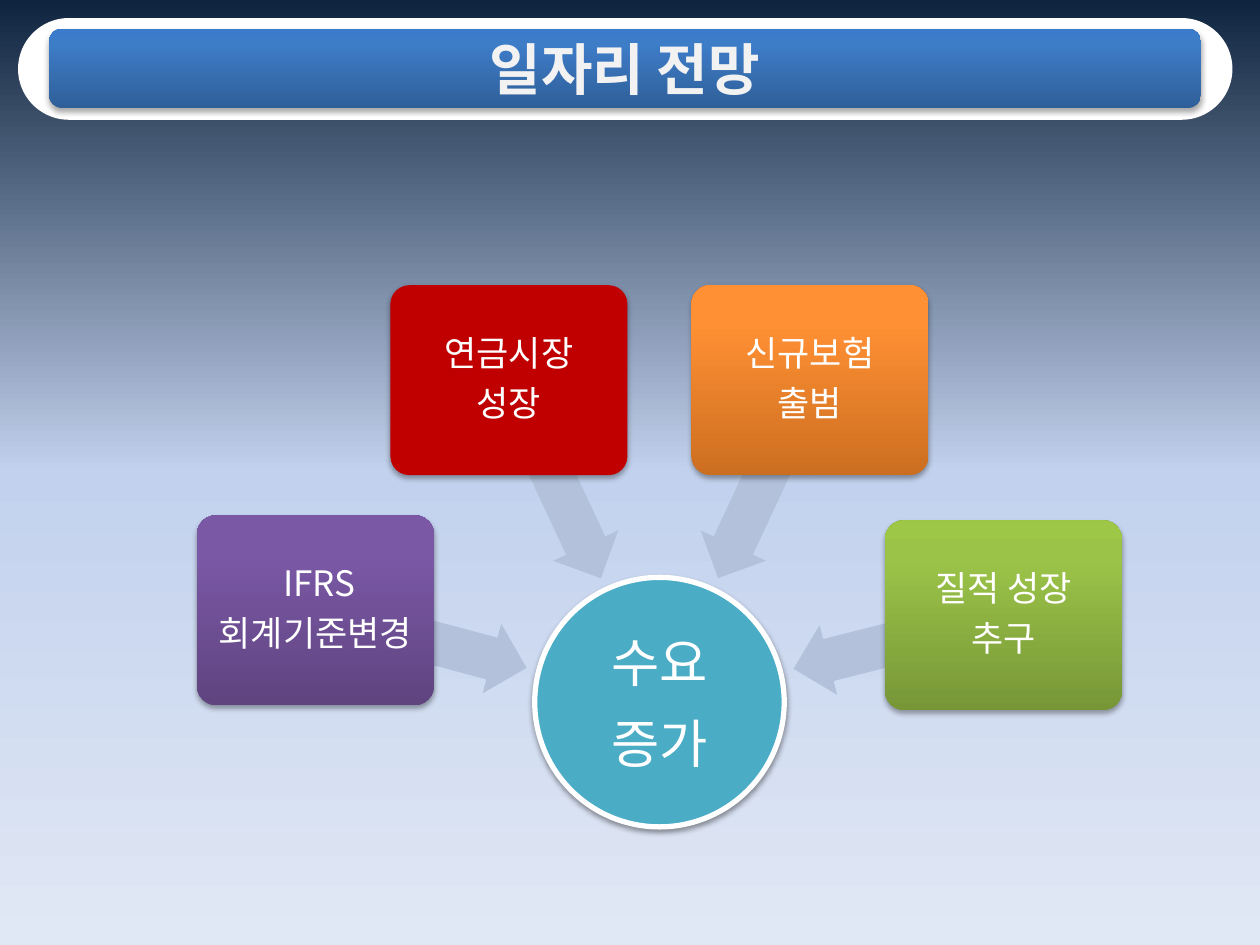
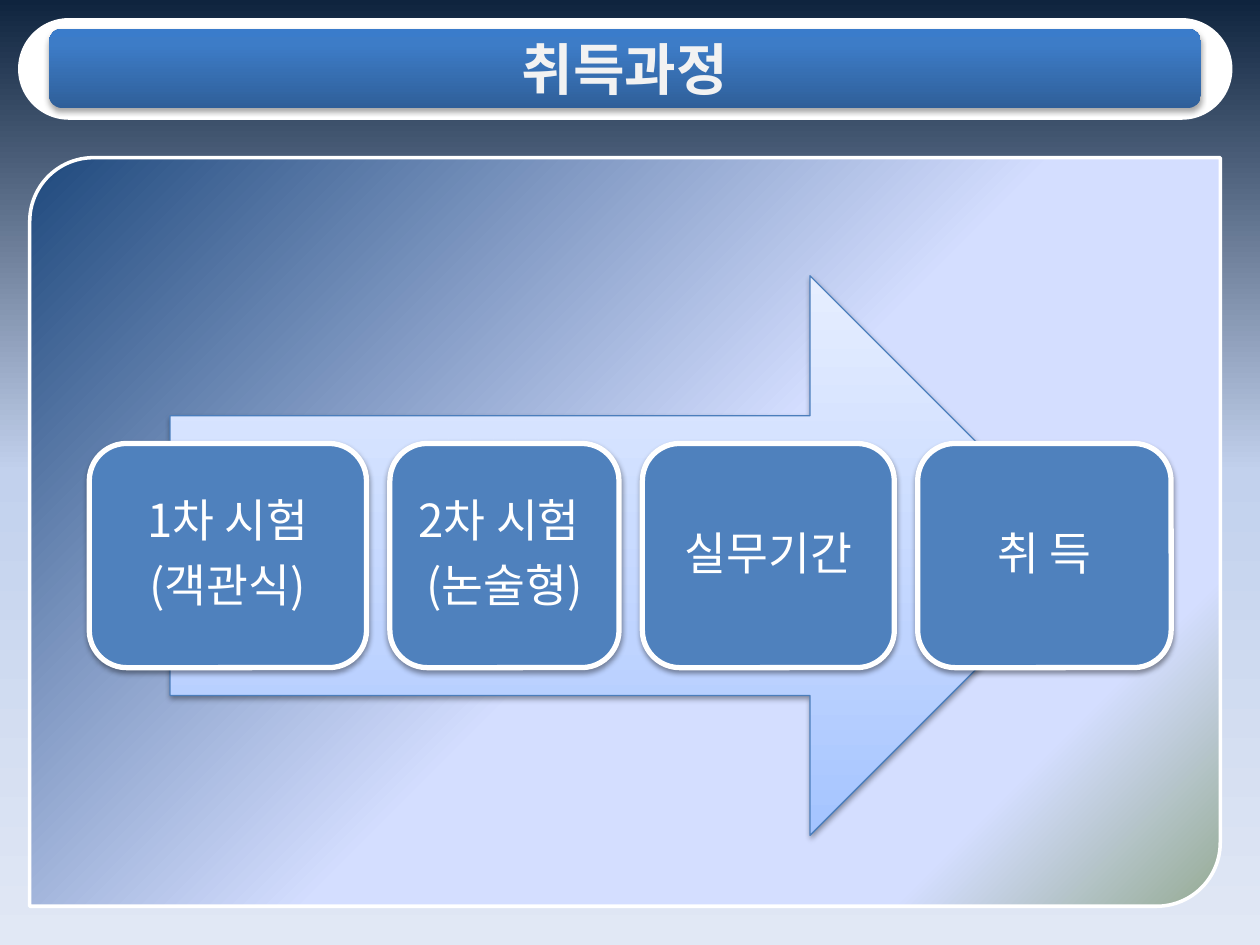
from dataclasses import dataclass
from typing import NamedTuple

from lxml import etree
from pptx import Presentation
from pptx.dml.color import RGBColor
from pptx.enum.shapes import MSO_SHAPE
from pptx.enum.text import MSO_ANCHOR, PP_ALIGN
from pptx.oxml.ns import qn
from pptx.util import Cm, Pt

ROUND, OVAL = MSO_SHAPE.ROUNDED_RECTANGLE, MSO_SHAPE.OVAL
LEFT_ARROW, RIGHT_ARROW = MSO_SHAPE.LEFT_ARROW, MSO_SHAPE.RIGHT_ARROW
DIAGONAL = MSO_SHAPE.ROUND_2_DIAG_RECTANGLE
MIDDLE, CENTER = MSO_ANCHOR.MIDDLE, PP_ALIGN.CENTER

FONT = "Noto Sans CJK KR"
WHITE, TITLE_COLOR = "FFFFFF", "F2F2F2"
STEP_BLUE, HUB_TEAL, LINK_GRAY = "4F81BD", "4BACC6", "B3C1DB"


class Gradient(NamedTuple):
    """Stops as (percent, colour); the angle runs clockwise."""
    angle: int
    stops: tuple[tuple[int, str], ...]


class Line(NamedTuple):
    color: str
    width: float


class Shadow(NamedTuple):
    """Black shadow straight below; lengths in points, alpha in percent."""
    alpha: int
    distance: float
    blur: float = 3.1


class Box(NamedTuple):
    """Left, top, width and height in centimetres."""
    left: float
    top: float
    width: float
    height: float


@dataclass(frozen=True)
class Look:
    fill: str | Gradient
    line: Line | None = None
    shadow: Shadow | None = None
    adj: tuple[float, ...] = ()


@dataclass(frozen=True)
class TextStyle:
    size: int
    color: str = WHITE
    bold: bool = False
    line_spacing: float | None = None
    after: int = 0
    inset: float = 0.05


@dataclass(frozen=True)
class Factor:
    lines: tuple[str, ...]
    left: float
    top: float
    fill: str | Gradient
    link_left: float
    link_top: float
    link_angle: float


class Step(NamedTuple):
    lines: tuple[str, ...]
    width: float


def rising(low: str, mid: str, high: str) -> Gradient:
    """Gradient from the bottom edge to the top edge."""
    return Gradient(270, ((0, low), (80, mid), (100, high)))


BACKGROUND = Gradient(90, ((0, "0F243E"), (50, "C2D1ED"), (100, "E1E8F5")))
SOFT, DEEP = Shadow(38, 1.6), Shadow(35, 1.8)

BAND = Look(WHITE, Line(WHITE, 2), adj=(0.5,))
BAND_BOX = Box(0.4, 0.4, 24.41, 1.98)
TITLE = Look(rising("2F5F99", "3D7CC7", "3A7CCB"), shadow=DEEP)
TITLE_BOX = Box(0.99, 0.58, 23.22, 1.6)
TITLE_TEXT = TextStyle(32, TITLE_COLOR, bold=True)

HUB = Look(HUB_TEAL, Line(WHITE, 3), SOFT)
HUB_BOX = Box(10.78, 11.64, 5.03, 5.03)
HUB_TEXT = TextStyle(30, after=35)
LINK = Look(LINK_GRAY, adj=(0.6, 0.5))
LINK_W, LINK_H = 4.39, 1.45
FACTOR_W, FACTOR_H = 4.78, 3.83
FACTOR_TEXT = TextStyle(20, line_spacing=0.9, after=35)
FACTORS = (
    Factor((" IFRS", "회계기준변경"), 3.97, 10.39,
           rising("5F4480", "7B58A6", "7C57A8"), 6.3, 12.17, 195),
    Factor(("연금시장", "성장"), 7.87, 5.75, "C00000", 8.99, 8.94, 245),
    Factor(("신규보험", "출범"), 13.94, 5.75,
           rising("CC6E20", "FF9034", "FF9136"), 13.21, 8.94, 295),
    Factor(("질적 성장", "추구"), 17.84, 10.49,
           rising("779737", "9BC348", "9DC746"), 15.93, 12.22, 345.8),
)

PANEL = Look(
    Gradient(45, ((0, "1F497D"), (53, "D4DEFF"), (83, "D4DEFF"), (100, "96AB94"))),
    Line(WHITE, 2), adj=(0.085, 0))
PANEL_BOX = Box(0.6, 3.18, 24, 15.09)
FLOW = Look(Gradient(270, ((0, "A4C4FF"), (35, "BFD4FF"), (100, "E6EEFF"))),
            Line("4B7EBC", 0.75), SOFT)
FLOW_BOX = Box(3.43, 5.56, 18.54, 11.28)
STEP = Look(STEP_BLUE, Line(WHITE, 3), SOFT)
STEP_TEXT = TextStyle(26, line_spacing=0.9, after=35)
STEP_LEFT, STEP_TOP, STEP_H, STEP_GAP = 1.8, 8.94, 4.52, 0.47
STEPS = (
    Step(("1차 시험", "(객관식)"), 5.59),
    Step(("2차 시험 ", "(논술형)"), 4.62),
    Step(("실무기간",), 5.08),
    Step(("취 득",), 5.11),
)


def rgb(color: str) -> RGBColor:
    return RGBColor.from_string(color)


def add_node(parent, tag: str, **attrs):
    node = etree.SubElement(parent, qn(tag))
    for name, value in attrs.items():
        node.set(name, str(value))
    return node


def paint(fill, holder, look: str | Gradient) -> None:
    """Fill with a colour, or swap the solid fill in holder for a gradient."""
    fill.solid()
    if isinstance(look, str):
        fill.fore_color.rgb = rgb(look)
        return
    solid = holder.find(".//" + qn("a:solidFill"))
    grad = etree.Element(qn("a:gradFill"), rotWithShape="1")
    stops = add_node(grad, "a:gsLst")
    for percent, color in look.stops:
        stop = add_node(stops, "a:gs", pos=percent * 1000)
        add_node(stop, "a:srgbClr", val=color)
    add_node(grad, "a:lin", ang=look.angle * 60000, scaled=0)
    solid.getparent().replace(solid, grad)


def add_shadow(sp, shadow: Shadow) -> None:
    effects = sp.element.spPr.find(qn("a:effectLst"))
    outer = add_node(effects, "a:outerShdw", blurRad=Pt(shadow.blur),
                     dist=Pt(shadow.distance), dir=5400000, rotWithShape=0)
    color = add_node(outer, "a:srgbClr", val="000000")
    add_node(color, "a:alpha", val=shadow.alpha * 1000)


def draw(s, kind: MSO_SHAPE, box: Box, look: Look, angle: float = 0):
    sp = s.shapes.add_shape(kind, *(Cm(v) for v in box))
    sp.rotation = angle
    for i, value in enumerate(look.adj):
        sp.adjustments[i] = value
    paint(sp.fill, sp.element.spPr, look.fill)
    if look.line:
        sp.line.color.rgb = rgb(look.line.color)
        sp.line.width = Pt(look.line.width)
    else:
        sp.line.fill.background()
    sp.shadow.inherit = False
    if look.shadow:
        add_shadow(sp, look.shadow)
    return sp


def write(sp, lines: tuple[str, ...], style: TextStyle) -> None:
    """Centre one paragraph per line in the shape."""
    tf = sp.text_frame
    inset = Cm(style.inset)
    frame = {"word_wrap": True, "vertical_anchor": MIDDLE,
             "margin_left": inset, "margin_right": inset,
             "margin_top": inset, "margin_bottom": inset}
    for name, value in frame.items():
        setattr(tf, name, value)
    font = {"name": FONT, "size": Pt(style.size), "bold": style.bold}
    for i, line in enumerate(lines):
        p = tf.add_paragraph() if i else tf.paragraphs[0]
        p.alignment = CENTER
        p.line_spacing = style.line_spacing
        if style.after:
            p.space_after = Pt(0)
            after = p._p.pPr.find(qn("a:spcAft"))
            after.clear()
            add_node(after, "a:spcPct", val=style.after * 1000)
        r = p.add_run()
        r.text = line
        for name, value in font.items():
            setattr(r.font, name, value)
        r.font.color.rgb = rgb(style.color)
        r.font._element.find(qn("a:latin")).addnext(
            etree.Element(qn("a:ea"), typeface=FONT))


def new_slide(prs):
    s = prs.slides.add_slide(prs.slide_layouts[6])
    paint(s.background.fill, s.element, BACKGROUND)
    return s


def add_title(s, title: str) -> None:
    draw(s, ROUND, BAND_BOX, BAND)
    write(draw(s, ROUND, TITLE_BOX, TITLE), (title,), TITLE_TEXT)


def outlook_slide(prs) -> None:
    s = new_slide(prs)
    write(draw(s, OVAL, HUB_BOX, HUB), ("수요", "증가"), HUB_TEXT)
    for f in FACTORS:
        draw(s, LEFT_ARROW, Box(f.link_left, f.link_top, LINK_W, LINK_H),
             LINK, f.link_angle)
        card = draw(s, ROUND, Box(f.left, f.top, FACTOR_W, FACTOR_H),
                    Look(f.fill, shadow=DEEP, adj=(0.1,)))
        write(card, f.lines, FACTOR_TEXT)
    add_title(s, "일자리 전망")


def process_slide(prs) -> None:
    s = new_slide(prs)
    draw(s, DIAGONAL, PANEL_BOX, PANEL)
    draw(s, RIGHT_ARROW, FLOW_BOX, FLOW)
    left = STEP_LEFT
    for step in STEPS:
        card = draw(s, ROUND, Box(left, STEP_TOP, step.width, STEP_H), STEP)
        write(card, step.lines, STEP_TEXT)
        left += step.width + STEP_GAP
    add_title(s, "취득과정")


def main() -> None:
    prs = Presentation()
    prs.slide_width, prs.slide_height = Cm(25.4), Cm(19.05)
    outlook_slide(prs)
    process_slide(prs)
    prs.save("out.pptx")


if __name__ == "__main__":
    main()
